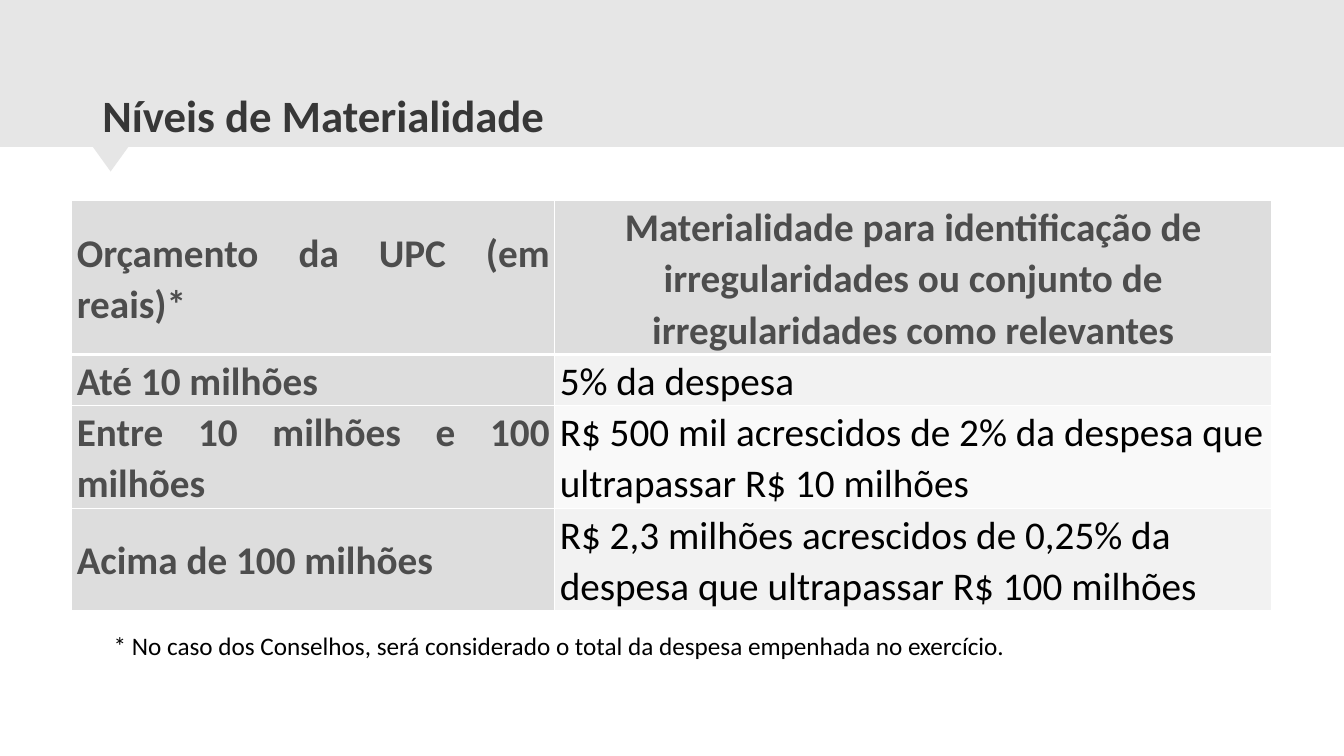
from lxml.etree import SubElement
from pptx import Presentation
from pptx.dml.color import RGBColor
from pptx.enum.shapes import MSO_SHAPE
from pptx.enum.text import MSO_ANCHOR, PP_ALIGN
from pptx.oxml.ns import qn
from pptx.util import Pt

COLORS = {
    "band": "E6E6E6",
    "title": "373737",
    "label": "4D4D4D",
    "text": "000000",
    "label_fill": "DDDDDD",
    "odd_row": "F2F2F2",
    "even_row": "F9F9F9",
    "border": "FFFFFF",
}
LINE_HEIGHT = 36.5


def format_paragraph(paragraph, color, font, layout):
    for name, value in layout.items():
        setattr(paragraph, name, value)
    for name, value in {"name": "Calibri", **font}.items():
        setattr(paragraph.font, name, value)
    paragraph.font.color.rgb = RGBColor.from_string(COLORS[color])


def add_border(cell, side, width):
    line = SubElement(cell._tc.get_or_add_tcPr(), qn(f"a:{side}"), w=str(Pt(width)))
    fill = SubElement(line, qn("a:solidFill"))
    SubElement(fill, qn("a:srgbClr"), val=COLORS["border"])


presentation = Presentation()
presentation.slide_width = Pt(960)
presentation.slide_height = Pt(540)
slide = presentation.slides.add_slide(presentation.slide_layouts[5])

title = slide.shapes.title
title_box = {"left": Pt(66), "top": Pt(19.5), "width": Pt(774), "height": Pt(85.5)}
for name, value in title_box.items():
    setattr(title, name, value)
title.text_frame.text = "Níveis de Materialidade"
title.text_frame.vertical_anchor = MSO_ANCHOR.BOTTOM
title.text_frame.word_wrap = True
format_paragraph(
    title.text_frame.paragraphs[0],
    "title",
    {"size": Pt(32), "bold": True},
    {"alignment": PP_ALIGN.LEFT, "line_spacing": 0.9},
)

header_shapes = [
    (MSO_SHAPE.ISOSCELES_TRIANGLE, (57, 92, 44, 30.5), 180),
    (MSO_SHAPE.RECTANGLE, (0, 0, 960, 105), 0),
]
for kind, box, rotation in header_shapes:
    shape = slide.shapes.add_shape(kind, *map(Pt, box))
    shape.rotation = rotation
    shape.shadow.inherit = False
    shape.fill.solid()
    shape.fill.fore_color.rgb = RGBColor.from_string(COLORS["band"])
    shape.line.fill.background()
    title.element.addprevious(shape.element)

rows = [
    (
        "Orçamento da UPC (em reais)*",
        "Materialidade para identificação de irregularidades ou conjunto de irregularidades como relevantes",
        3,
    ),
    ("Até 10 milhões", "5% da despesa", 1),
    (
        "Entre 10 milhões e 100 milhões",
        "R$ 500 mil acrescidos de 2% da despesa que ultrapassar R$ 10 milhões",
        2,
    ),
    (
        "Acima de 100 milhões",
        "R$ 2,3 milhões acrescidos de 0,25% da despesa que ultrapassar R$ 100 milhões",
        2,
    ),
]
column_widths = [345, 512]
line_total = sum(line_count for *texts, line_count in rows)
table = slide.shapes.add_table(
    len(rows),
    len(column_widths),
    Pt(51.25),
    Pt(143.5),
    Pt(sum(column_widths)),
    Pt(LINE_HEIGHT * line_total),
).table
for column, width in zip(table.columns, column_widths):
    column.width = Pt(width)

cell_format = {
    "margin_left": Pt(3.6),
    "margin_right": Pt(3.6),
    "margin_top": 0,
    "margin_bottom": 0,
    "vertical_anchor": MSO_ANCHOR.MIDDLE,
}
for row_index, (*texts, line_count) in enumerate(rows):
    table.rows[row_index].height = Pt(LINE_HEIGHT * line_count)
    for column_index, text in enumerate(texts):
        cell = table.cell(row_index, column_index)
        cell.text = text
        for name, value in cell_format.items():
            setattr(cell, name, value)

        is_label = row_index == 0 or column_index == 0
        if column_index == 0:
            alignment = PP_ALIGN.JUSTIFY
        else:
            alignment = PP_ALIGN.CENTER if row_index == 0 else PP_ALIGN.LEFT
        format_paragraph(
            cell.text_frame.paragraphs[0],
            "label" if is_label else "text",
            {"size": Pt(28), "bold": is_label},
            {"alignment": alignment, "line_spacing": 1.07, "space_after": Pt(8)},
        )

        add_border(cell, "lnL", 1)
        add_border(cell, "lnR", 1)
        add_border(cell, "lnT", 3 if row_index == 1 else 1)
        add_border(cell, "lnB", 3 if row_index == 0 else 1)
        row_fill = "odd_row" if row_index % 2 else "even_row"
        cell.fill.solid()
        cell.fill.fore_color.rgb = RGBColor.from_string(
            COLORS["label_fill" if is_label else row_fill]
        )

footnote = slide.shapes.add_textbox(Pt(72), Pt(437), Pt(681), Pt(41))
footnote_format = {"word_wrap": True, "margin_left": Pt(9.2), "margin_top": Pt(13)}
for name, value in footnote_format.items():
    setattr(footnote.text_frame, name, value)
footnote.text_frame.text = (
    "* No caso dos Conselhos, será considerado o total da despesa empenhada no exercício."
)
format_paragraph(
    footnote.text_frame.paragraphs[0],
    "text",
    {"size": Pt(18)},
    {"alignment": PP_ALIGN.JUSTIFY},
)

presentation.save("out.pptx")
